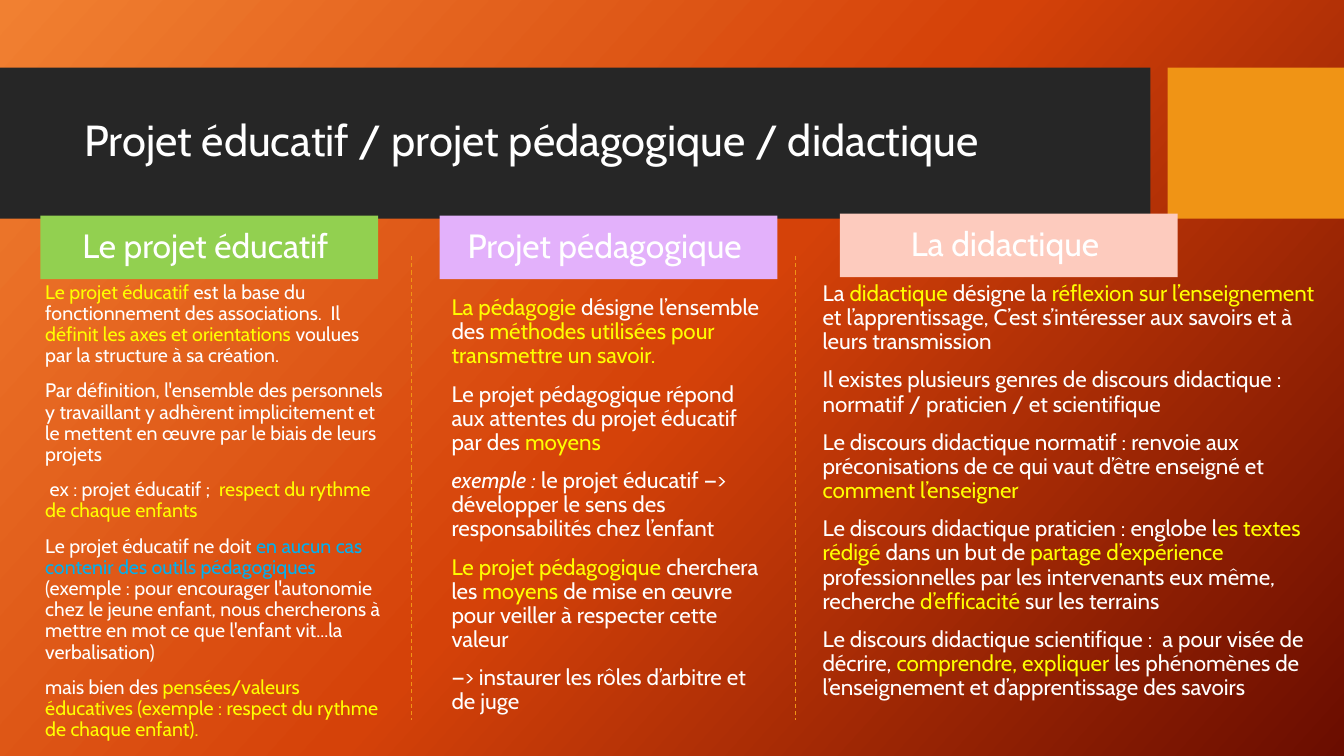
from copy import deepcopy

from lxml import etree
from pptx import Presentation
from pptx.dml.color import RGBColor
from pptx.enum import dml, shapes, text
from pptx.oxml import ns
from pptx.util import Inches, Pt

FONT = "Cabin"
WHITE = RGBColor(0xFF, 0xFF, 0xFF)
YELLOW = RGBColor(0xFF, 0xFF, 0x00)
BLUE = RGBColor(0x00, 0xB0, 0xF0)
DARK = RGBColor(0x26, 0x26, 0x26)
ORANGE = RGBColor(0xF0, 0x94, 0x15)
GREEN = RGBColor(0x92, 0xD0, 0x50)
LILAC = RGBColor(0xE3, 0xB1, 0xFB)
PINK = RGBColor(0xFD, 0xCB, 0xBE)
BACKGROUND = [
    (0, RGBColor(0xF1, 0x80, 0x31)),
    (0.5, RGBColor(0xD5, 0x42, 0x09)),
    (1, RGBColor(0x6A, 0x0D, 0x00)),
]

TITLE = "Projet éducatif / projet pédagogique / didactique"

# Each paragraph is a list of runs: a plain string, or (string, colour).
EDUCATIF = [
    [("Le projet éducatif ", YELLOW), "est la base du fonctionnement des associations.  Il ",
     ("définit les axes et orientations", YELLOW), " voulues par la structure à sa création."],
    ["Par définition, l'ensemble des personnels y travaillant y adhèrent implicitement "
     "et le mettent en œuvre par le biais de leurs projets"],
    [" ex : projet éducatif ;  ", ("respect du rythme de chaque enfants", YELLOW)],
    ["Le projet éducatif ne doit ", ("en aucun cas contenir des outils pédagogiques ", BLUE),
     "(exemple : pour encourager l'autonomie chez le jeune enfant, nous chercherons à "
     "mettre en mot ce que l'enfant vit...la verbalisation)"],
    ["mais bien des ", ("pensées/valeurs éducatives (exemple : respect du rythme "
                        "de chaque enfant).", YELLOW)],
]
PEDAGOGIQUE = [
    [("La pédagogie", YELLOW), " désigne l’ensemble des ",
     ("méthodes utilisées pour transmettre un savoir.", YELLOW)],
    ["Le projet pédagogique répond aux attentes du projet éducatif par des ",
     ("moyens", YELLOW)],
    [("exemple :", WHITE, True),
     " le projet éducatif —> développer le sens des responsabilités chez l’enfant"],
    [("Le projet pédagogique ", YELLOW), "cherchera les ", ("moyens", YELLOW),
     " de mise en œuvre pour veiller à respecter cette valeur"],
    ["—> instaurer les rôles d’arbitre et de juge"],
]
DIDACTIQUE = [
    ["La ", ("didactique", YELLOW), " désigne la ", ("réflexion sur l’enseignement", YELLOW),
     " et l’apprentissage, C’est s’intéresser aux savoirs et à leurs transmission"],
    ["Il existes plusieurs genres de discours didactique : normatif / praticien / "
     "et scientifique"],
    ["Le discours didactique normatif : renvoie aux préconisations de ce qui vaut "
     "d’être enseigné et ", ("comment l’enseigner", YELLOW)],
    ["Le discours didactique praticien : englobe l", ("es textes rédigé ", YELLOW),
     "dans un but de ", ("partage d’expérience ", YELLOW),
     "professionnelles par les intervenants eux même, recherche ",
     ("d’efficacité", YELLOW), " sur les terrains"],
    ["Le discours didactique scientifique :  a pour visée de décrire, ",
     ("comprendre, expliquer", YELLOW),
     " les phénomènes de l’enseignement et d’apprentissage des savoirs"],
]

# Heading, fill, heading (left, top), body text, body (left, top, width, height), size
COLUMNS = [
    ("Le projet éducatif ", GREEN, (0.4, 2.14), EDUCATIF, (0.35, 2.75, 3.59, 4.65), 14),
    ("Projet pédagogique ", LILAC, (4.36, 2.14), PEDAGOGIQUE, (4.38, 2.89, 3.35, 4.3), 16),
    ("La didactique ", PINK, (8.33, 2.12), DIDACTIQUE, (8.06, 2.75, 5.22, 4.3), 16),
]
HEADING_SIZE = (3.35, 0.63)


def write(sp, paragraphs, size, align=text.PP_ALIGN.LEFT, anchor=text.MSO_ANCHOR.TOP):
    tf = sp.text_frame
    tf.word_wrap = True
    tf.auto_size = text.MSO_AUTO_SIZE.NONE
    tf.vertical_anchor = anchor
    for i, runs in enumerate(paragraphs):
        p = tf.add_paragraph() if i else tf.paragraphs[0]
        p.alignment = align
        p.line_spacing = 0.9
        p.space_before = Pt(10 if i else 0)
        for run in runs:
            words, color, *italic = (run, WHITE) if isinstance(run, str) else run
            r = p.add_run()
            r.text = words
            r.font.name = FONT
            r.font.size = Pt(size)
            r.font.color.rgb = color
            if italic:
                r.font.italic = True


def add_textbox(slide, box):
    return slide.shapes.add_textbox(*map(Inches, box))


def add_rect(slide, box, color):
    sp = slide.shapes.add_shape(shapes.MSO_SHAPE.RECTANGLE, *map(Inches, box))
    sp.shadow.inherit = False
    sp.fill.solid()
    sp.fill.fore_color.rgb = color
    sp.line.fill.background()
    return sp


def paint_background(slide):
    fill = slide.background.fill
    fill.gradient()
    fill.gradient_angle = 360 - 42
    stop_list = slide.element.xpath(".//a:gsLst")[0]
    stop_list.append(deepcopy(stop_list[0]))
    for stop, (position, color) in zip(fill.gradient_stops, BACKGROUND):
        stop.position = position
        stop.color.rgb = color


def add_title_band(slide, top, height):
    add_rect(slide, (0, top, 11.41, height), DARK)
    add_rect(slide, (11.58, top, 1.75, height), ORANGE)
    title = add_textbox(slide, (0.74, top + 0.15, 10.51, 1.18))
    write(title, [[TITLE]], 31, anchor=text.MSO_ANCHOR.MIDDLE)


def add_column(slide, heading, color, corner, paragraphs, box, size):
    sp = add_rect(slide, (*corner, *HEADING_SIZE), color)
    write(sp, [[heading]], 24, text.PP_ALIGN.CENTER, text.MSO_ANCHOR.MIDDLE)
    write(add_textbox(slide, box), paragraphs, size)


def add_divider(slide, x, top, bottom):
    line = slide.shapes.add_connector(
        shapes.MSO_CONNECTOR.STRAIGHT, *map(Inches, (x, top, x, bottom)))
    line.line.color.rgb = ORANGE
    line.line.width = Pt(0.75)
    line.line.dash_style = dml.MSO_LINE.DASH
    etree.SubElement(line.element.spPr, ns.qn("a:effectLst"))


def main():
    prs = Presentation()
    prs.slide_width, prs.slide_height = Inches(13.33), Inches(7.5)
    slide = prs.slides.add_slide(prs.slide_layouts[6])
    paint_background(slide)
    add_title_band(slide, 0.67, 1.5)
    for column in COLUMNS:
        add_column(slide, *column)
    for x in (4.08, 7.89):
        add_divider(slide, x, 2.54, 7.14)
    prs.save("out.pptx")


if __name__ == "__main__":
    main()
